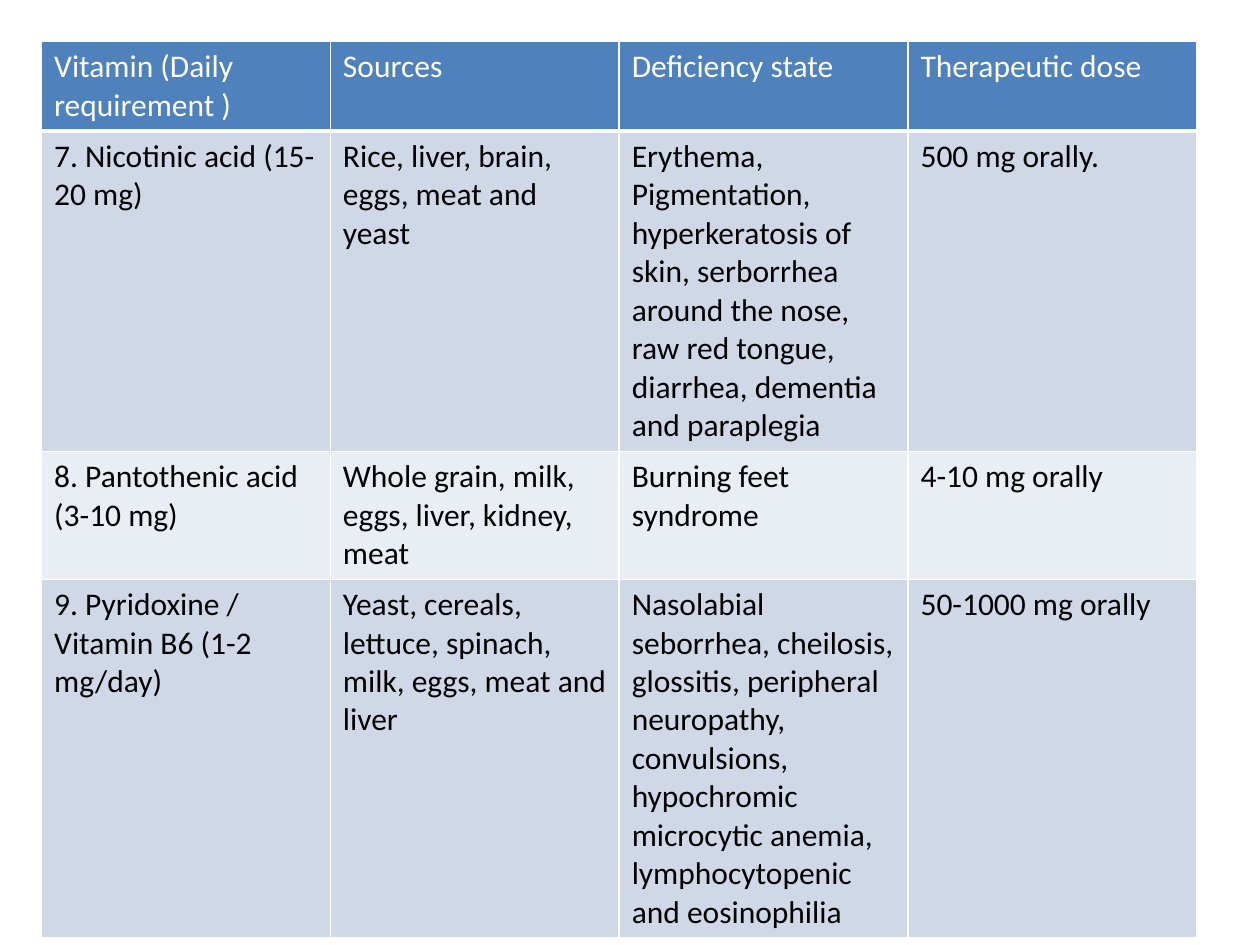
import pptx
import pptx.dml.color
import pptx.oxml
import pptx.oxml.ns
import pptx.util
from dataclasses import dataclass

Inches = pptx.util.Inches


@dataclass(frozen=True)
class Theme:
    font: str = "Calibri"
    size: int = 18
    head: str = "4F81BD"
    bands: tuple = ("D0D8E8", "E9EDF4")
    light: str = "FFFFFF"
    dark: str = "000000"
    thin: int = 1
    thick: int = 3


class Deck:
    def __init__(self, theme):
        self.theme = theme
        self.file = pptx.Presentation()
        self.file.slide_width = Inches(10)
        self.file.slide_height = Inches(7.5)
        self.slide = self.file.slides.add_slide(self.file.slide_layouts[6])

    def text(self, cell, words, color):
        run = cell.text_frame.paragraphs[0].add_run()
        run.text = words
        run.font.name = self.theme.font
        run.font.size = pptx.util.Pt(self.theme.size)
        run.font.bold = False
        run.font.color.rgb = pptx.dml.color.RGBColor.from_string(color)

    def fill(self, cell, color):
        cell.fill.solid()
        cell.fill.fore_color.rgb = pptx.dml.color.RGBColor.from_string(color)

    def border(self, cell, base):
        # Border lines must come before the fill in the cell properties
        props = cell._tc.get_or_add_tcPr()
        widths = {"L": self.theme.thin, "R": self.theme.thin,
                  "T": self.theme.thin, "B": base}
        for place, (side, width) in enumerate(widths.items()):
            line = pptx.oxml.parse_xml(
                f'<a:ln{side} {pptx.oxml.ns.nsdecls("a")} w="{pptx.util.Pt(width)}">'
                f'<a:solidFill><a:srgbClr val="{self.theme.light}"/></a:solidFill>'
                f'</a:ln{side}>')
            props.insert(place, line)

    def table(self, rows, left, top, width, heights):
        look = self.theme
        frame = self.slide.shapes.add_table(
            len(rows), len(rows[0]), Inches(left), Inches(top),
            Inches(width), Inches(sum(heights)))
        grid = frame.table
        for y, (row, height) in enumerate(zip(rows, heights)):
            grid.rows[y].height = Inches(height)
            head = y == 0
            for x, words in enumerate(row):
                cell = grid.cell(y, x)
                self.text(cell, words, look.light if head else look.dark)
                self.fill(cell, look.head if head else look.bands[(y - 1) % 2])
                self.border(cell, look.thick if head else look.thin)


# Table content: header, then one row per vitamin
ROWS = [
    ("Vitamin (Daily requirement )", "Sources", "Deficiency state",
     "Therapeutic dose"),
    ("7. Nicotinic acid (15-20 mg)",
     "Rice, liver, brain, eggs, meat and yeast",
     "Erythema, Pigmentation, hyperkeratosis of skin, serborrhea around "
     "the nose, raw red tongue, diarrhea, dementia and paraplegia",
     "500 mg orally."),
    ("8. Pantothenic acid (3-10 mg)",
     "Whole grain, milk, eggs, liver, kidney, meat",
     "Burning feet syndrome",
     "4-10 mg orally"),
    ("9. Pyridoxine / Vitamin B6 (1-2 mg/day)",
     "Yeast, cereals, lettuce, spinach, milk, eggs, meat and liver",
     "Nasolabial seborrhea, cheilosis, glossitis, peripheral neuropathy, "
     "convulsions, hypochromic microcytic anemia, lymphocytopenic and "
     "eosinophilia",
     "50-1000 mg orally"),
]


def main():
    deck = Deck(Theme())
    deck.table(ROWS, 0.33, 0.33, 9.17, (0.7, 2.54, 1.01, 2.84))
    deck.file.save("out.pptx")


if __name__ == "__main__":
    main()
